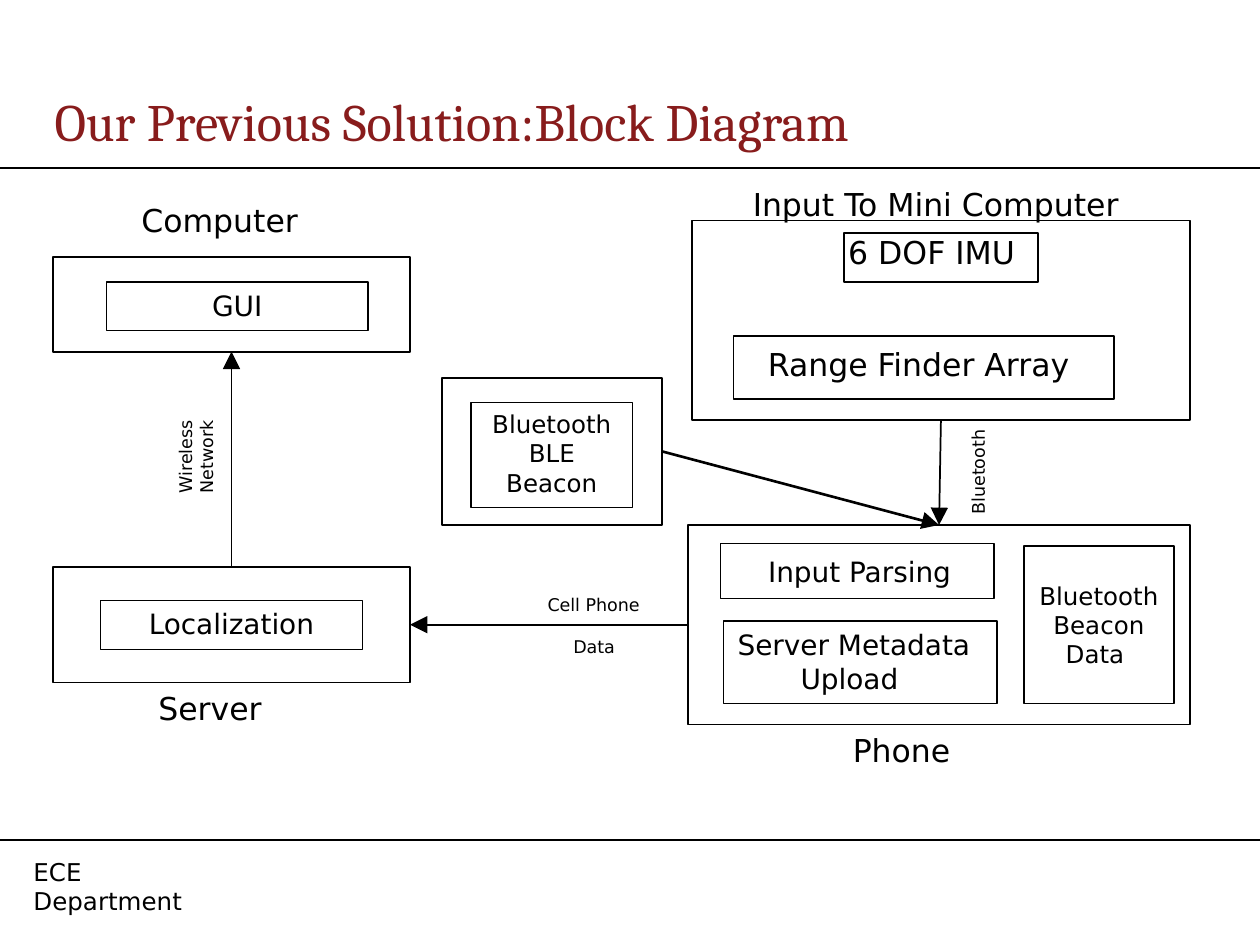
import pptx
import pptx.util
import pptx.dml.color
import pptx.enum.shapes
import pptx.enum.text
import lxml.etree

Pt = pptx.util.Pt
ALIGN = pptx.enum.text.PP_ALIGN
ANCHOR = pptx.enum.text.MSO_ANCHOR
BLACK, MAROON = "000000", "881C1C"
SANS, SERIF = "DejaVu Sans", "Cambria"
BOTTOM_SIDE, TOP_SIDE, LEFT_SIDE, RIGHT_SIDE = 2, 0, 1, 3


def color(hex_string):
    return pptx.dml.color.RGBColor.from_string(hex_string)


def write(shape, text, size, align=ALIGN.CENTER, anchor=ANCHOR.TOP, spacing=None,
          font=SANS, text_color=BLACK):
    """Put one formatted paragraph into the shape."""
    frame = shape.text_frame
    frame.text = text
    frame_format = {"word_wrap": True, "vertical_anchor": anchor,
                    "auto_size": pptx.enum.text.MSO_AUTO_SIZE.NONE,
                    "margin_left": Pt(7.2), "margin_right": Pt(7.2),
                    "margin_top": Pt(3.6), "margin_bottom": Pt(3.6)}
    for name, value in frame_format.items():
        setattr(frame, name, value)
    paragraph = frame.paragraphs[0]
    paragraph.alignment = align
    paragraph.line_spacing = spacing
    for name, value in {"name": font, "size": Pt(size), "bold": False}.items():
        setattr(paragraph.font, name, value)
    paragraph.font.color.rgb = color(text_color)


presentation = pptx.Presentation()
presentation.slide_width, presentation.slide_height = Pt(720), Pt(540)
slide = presentation.slides.add_slide(presentation.slide_layouts[5])
shapes = slide.shapes

title = shapes.title
title_place = {"left": 24, "top": 48, "width": 696, "height": 42}
for name, value in title_place.items():
    setattr(title, name, Pt(value))
write(title, "Our Previous Solution:Block Diagram", 30, ALIGN.LEFT, ANCHOR.MIDDLE,
      font=SERIF, text_color=MAROON)

# Boxes: key, (left, top, width, height), line width, text, text size, anchor
boxes = {}
for key, place, line_width, text, size, anchor in [
    ("Input", (395.4, 126, 284.6, 114), 1, None, None, None),
    ("Phone", (393.1, 300, 287, 114), 1, None, None, None),
    ("Server", (30.3, 324, 204, 66), 1, None, None, None),
    ("Computer", (30.3, 147, 204, 54), 1, None, None, None),
    ("Beacon", (252.5, 216, 126, 84), 1, None, None, None),
    ("IMU", (482.4, 133.2, 110.9, 28), 1, None, None, None),
    ("Range Finder", (419.2, 192, 217.4, 36), 1, None, None, None),
    ("Parsing", (411.8, 310.6, 156.4, 31.4), 1, None, None, None),
    ("Upload", (413.4, 355, 156.4, 47), 1, None, None, None),
    ("Localization", (57.4, 343, 149.8, 28), 0.75, "Localization", 16, ANCHOR.TOP),
    ("GUI", (60.8, 161.2, 149.5, 27.8), 0.75, "GUI", 16, ANCHOR.TOP),
    ("BLE Beacon", (269.2, 230.2, 92.2, 60), 0.75, "Bluetooth BLE Beacon", 14, ANCHOR.TOP),
    ("Beacon Data", (585, 312, 85.8, 90), 1, "Bluetooth Beacon Data ", 14, ANCHOR.MIDDLE),
]:
    box = shapes.add_shape(pptx.enum.shapes.MSO_SHAPE.RECTANGLE, *map(Pt, place))
    box.shadow.inherit = False
    box.fill.background()
    box.line.color.rgb = color(BLACK)
    box.line.width = Pt(line_width)
    if text:
        write(box, text, size, anchor=anchor)
    boxes[key] = box

# Labels: text, (left, top, width, height), text size, line spacing, rotation
for text, place, size, spacing, rotation in [
    ("Input To Mini Computer", (416, 102, 237.5, 36), 18, None, 0),
    ("Computer", (65.5, 111.2, 120, 36), 18, None, 0),
    ("Server", (60, 390, 120, 36), 18, None, 0),
    ("Phone", (455.2, 414, 120, 36), 18, None, 0),
    ("6 DOF IMU ", (475.2, 132, 120, 47), 18, 0.9, 0),
    ("Range Finder Array", (426, 198, 198, 36), 18, 0.8, 0),
    ("Input Parsing", (413, 313.3, 156.4, 29), 16, None, 0),
    ("Server Metadata Upload ", (408, 355.2, 160, 47), 16, None, 0),
    ("Cell Phone", (303.2, 336, 72, 18), 10, None, 0),
    ("Data", (305, 360, 69, 24), 10, None, 0),
    ("Bluetooth", (522.2, 260.8, 72, 18), 10, None, 270),
    ("Wireless Network", (79.2, 242, 72, 38), 10, None, 270),
]:
    label = shapes.add_textbox(*map(Pt, place))
    label.rotation = rotation
    write(label, text, size, spacing=spacing)

footer = shapes.add_textbox(Pt(12), Pt(486), Pt(129), Pt(24))
write(footer, "ECE Department", 14, ALIGN.LEFT)

# Rules run across the slide; arrows join the sides of two boxes
lines = []
for rule_top in (96, 480):
    rule = shapes.add_connector(pptx.enum.shapes.MSO_CONNECTOR.STRAIGHT,
                                Pt(0), Pt(rule_top), Pt(720), Pt(rule_top))
    lines.append((rule, 1, False))
for source, source_side, target, target_side, line_width in [
    ("Input", BOTTOM_SIDE, "Phone", TOP_SIDE, 1),
    ("Phone", LEFT_SIDE, "Server", RIGHT_SIDE, 1),
    ("Server", TOP_SIDE, "Computer", BOTTOM_SIDE, 1),
    ("Beacon", RIGHT_SIDE, "Phone", TOP_SIDE, 1.5),
]:
    arrow = shapes.add_connector(pptx.enum.shapes.MSO_CONNECTOR.STRAIGHT, 0, 0, 0, 0)
    arrow.begin_connect(boxes[source], source_side)
    arrow.end_connect(boxes[target], target_side)
    lines.append((arrow, line_width, True))

namespace = "{http://schemas.openxmlformats.org/drawingml/2006/main}"
for line, line_width, has_head in lines:
    line.line.color.rgb = color(BLACK)
    line.line.width = Pt(line_width)
    properties = line._element.spPr
    if has_head:
        outline = properties.find(namespace + "ln")
        lxml.etree.SubElement(outline, namespace + "tailEnd", type="triangle", w="lg", len="lg")
    lxml.etree.SubElement(properties, namespace + "effectLst")

presentation.save("out.pptx")
